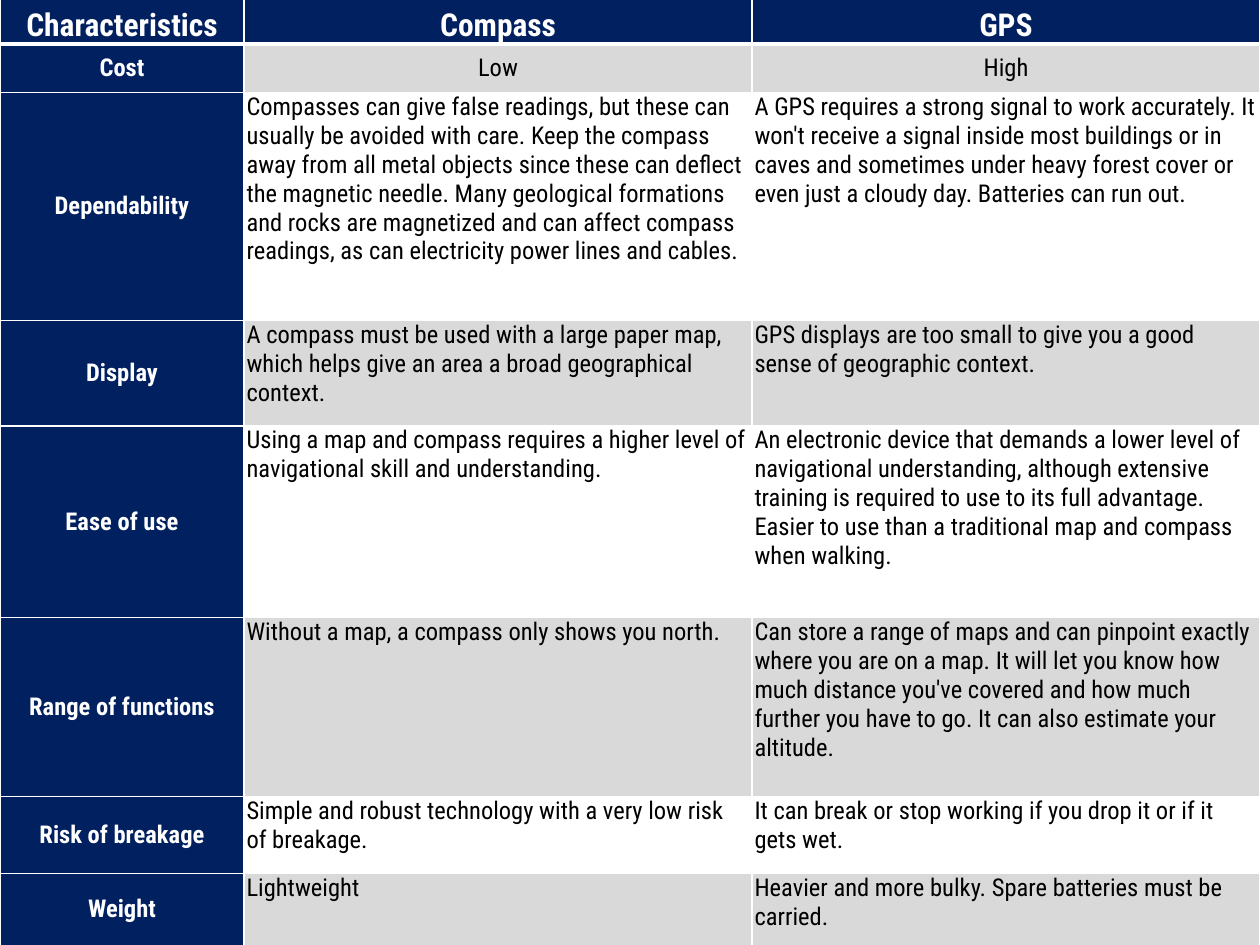
from dataclasses import dataclass

from lxml.etree import SubElement
from pptx import Presentation
from pptx.dml.color import RGBColor
from pptx.enum.text import MSO_ANCHOR, PP_ALIGN
from pptx.oxml.ns import qn
from pptx.table import Table, _Cell as Cell
from pptx.util import Cm, Pt

NAVY = RGBColor(0x00, 0x20, 0x60)
GREY = RGBColor(0xD9, 0xD9, 0xD9)
WHITE = RGBColor(0xFF, 0xFF, 0xFF)
BLACK = RGBColor(0x00, 0x00, 0x00)
FONT = "Roboto Condensed"
THIN, THICK = Pt(1), Pt(3)
COLUMN_WIDTHS = (4.92, 10.24, 10.24)


@dataclass(frozen=True)
class Comparison:
    """One table row, with its height in centimetres."""
    height: float
    characteristic: str
    compass: str
    gps: str


@dataclass(frozen=True)
class CellStyle:
    fill: RGBColor | None
    color: RGBColor
    size: int = 14
    bold: bool = False
    align: PP_ALIGN = PP_ALIGN.CENTER
    anchor: MSO_ANCHOR = MSO_ANCHOR.MIDDLE


COMPARISONS = (
    Comparison(0.91, "Characteristics", "Compass", "GPS"),
    Comparison(0.97, "Cost", "Low", "High"),
    Comparison(
        4.6, "Dependability",
        "Compasses can give false readings, but these can usually be avoided with care. "
        "Keep the compass away from all metal objects since these can deflect the magnetic "
        "needle. Many geological formations and rocks are magnetized and can affect compass "
        "readings, as can electricity power lines and cables.",
        "A GPS requires a strong signal to work accurately. It won't receive a signal inside "
        "most buildings or in caves and sometimes under heavy forest cover or even just a "
        "cloudy day. Batteries can run out."),
    Comparison(
        2.13, "Display",
        "A compass must be used with a large paper map, which helps give an area a broad "
        "geographical context.",
        "GPS displays are too small to give you a good sense of geographic context."),
    Comparison(
        3.86, "Ease of use",
        "Using a map and compass requires a higher level of navigational skill and "
        "understanding.",
        "An electronic device that demands a lower level of navigational understanding, "
        "although extensive training is required to use to its full advantage. Easier to use "
        "than a traditional map and compass when walking."),
    Comparison(
        3.61, "Range of functions",
        "Without a map, a compass only shows you north.",
        "Can store a range of maps and can pinpoint exactly where you are on a map. It will "
        "let you know how much distance you've covered and how much further you have to go. "
        "It can also estimate your altitude."),
    Comparison(
        1.55, "Risk of breakage",
        "Simple and robust technology with a very low risk of breakage.",
        "It can break or stop working if you drop it or if it gets wet."),
    Comparison(
        1.45, "Weight", "Lightweight",
        "Heavier and more bulky. Spare batteries must be carried."),
)


def style_for(row: int, column: int) -> CellStyle:
    if row == 0:
        return CellStyle(NAVY, WHITE, size=18, bold=True, anchor=MSO_ANCHOR.BOTTOM)
    if column == 0:
        return CellStyle(NAVY, WHITE, bold=True)
    band = GREY if row % 2 else None
    if row == 1:
        return CellStyle(band, BLACK)
    return CellStyle(band, BLACK, align=PP_ALIGN.LEFT, anchor=MSO_ANCHOR.TOP)


def add_borders(cell: Cell, top: int, bottom: int) -> None:
    properties = cell._tc.get_or_add_tcPr()
    for side, width in (("L", THIN), ("R", THIN), ("T", top), ("B", bottom)):
        line = SubElement(properties, qn(f"a:ln{side}"), w=str(width))
        fill = SubElement(line, qn("a:solidFill"))
        SubElement(fill, qn("a:srgbClr"), val=str(WHITE))


def fill_cell(cell: Cell, text: str, style: CellStyle) -> None:
    cell.text = text
    cell.margin_left = cell.margin_right = Cm(0.05)
    cell.margin_top = cell.margin_bottom = 0
    cell.vertical_anchor = style.anchor
    if style.fill is None:
        cell.fill.background()
    else:
        cell.fill.solid()
        cell.fill.fore_color.rgb = style.fill
    paragraph = cell.text_frame.paragraphs[0]
    paragraph.alignment = style.align
    font = paragraph.font
    font.name = FONT
    font.size = Pt(style.size)
    font.bold = style.bold
    font.color.rgb = style.color


def fill_table(table: Table) -> None:
    table.horz_banding = False
    for column, width in zip(table.columns, COLUMN_WIDTHS):
        column.width = Cm(width)
    for row, comparison in enumerate(COMPARISONS):
        table.rows[row].height = Cm(comparison.height)
        texts = (comparison.characteristic, comparison.compass, comparison.gps)
        for column, text in enumerate(texts):
            cell = table.cell(row, column)
            add_borders(cell, top=THICK if row == 1 else THIN,
                        bottom=THICK if row == 0 else THIN)
            fill_cell(cell, text, style_for(row, column))


def main() -> None:
    presentation = Presentation()
    presentation.slide_width = Cm(25.4)
    presentation.slide_height = Cm(19.05)
    slide = presentation.slides.add_slide(presentation.slide_layouts[6])
    height = sum(comparison.height for comparison in COMPARISONS)
    frame = slide.shapes.add_table(
        len(COMPARISONS), len(COLUMN_WIDTHS),
        Cm(0), Cm(-0.02), Cm(sum(COLUMN_WIDTHS)), Cm(height))
    fill_table(frame.table)
    presentation.save("out.pptx")


if __name__ == "__main__":
    main()
